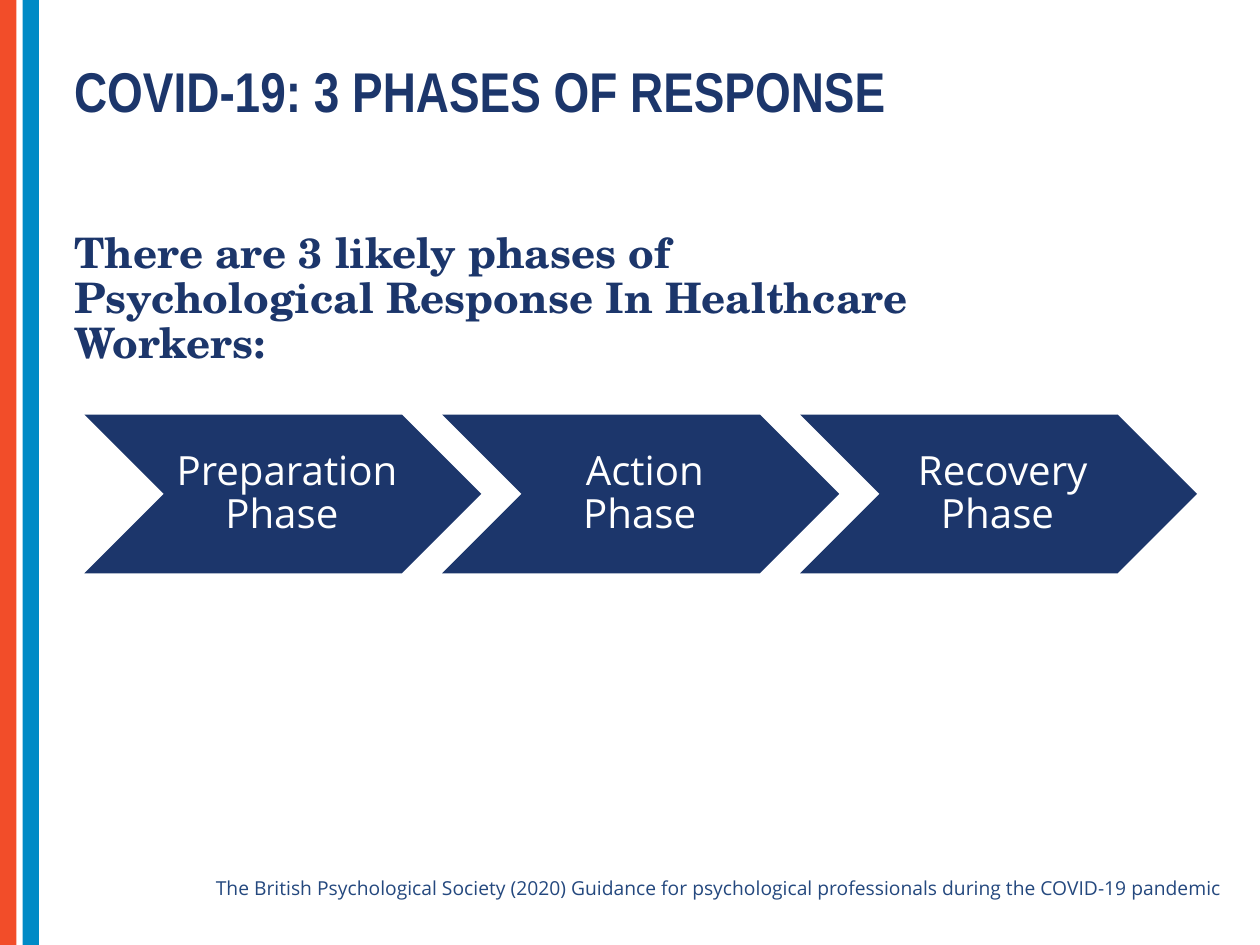
from dataclasses import dataclass

from pptx import Presentation
from pptx.dml.color import RGBColor
from pptx.enum.shapes import MSO_SHAPE as Shape
from pptx.enum.text import MSO_ANCHOR as Anchor, PP_ALIGN as Align
from pptx.util import Inches, Pt

COLORS = {
    "orange": "F24D29",
    "blue": "008AC6",
    "navy": "1C366B",
    "source": "24487E",
    "white": "FFFFFF",
}
SLIDE_WIDTH, SLIDE_HEIGHT = 10, 7.5
BAR_WIDTH, BAR_STEP = 0.13, 0.18
CHEVRON_LEFT, CHEVRON_TOP, CHEVRON_STEP = 0.67, 3.29, 2.84
CHEVRON_WIDTH, CHEVRON_HEIGHT = 3.15, 1.26


@dataclass
class Style:
    font: str
    size: float
    color: str
    bold: bool = False
    align: Align = Align.LEFT


@dataclass
class Label:
    text: str
    left: float
    top: float
    width: float
    height: float
    style: Style


CHEVRON_STYLE = Style("Open Sans", 23, "white", align=Align.CENTER)
LABELS = [
    Label("COVID-19: 3 PHASES OF RESPONSE", 0.49, 0.46, 7.4, 0.6,
          Style("Arial Narrow", 32, "navy", bold=True)),
    Label("There are 3 likely phases of Psychological Response In Healthcare Workers:",
          0.49, 1.79, 7.2, 1.2, Style("TeX Gyre Schola", 24, "navy", bold=True)),
    Label("The British Psychological Society (2020) Guidance for psychological "
          "professionals during the COVID-19 pandemic",
          0.51, 6.93, 9.29, 0.36, Style("Open Sans", 11, "source", align=Align.RIGHT)),
]
PHASES = ["Preparation", "Action", "Recovery"]


def color_of(name: str) -> RGBColor:
    return RGBColor.from_string(COLORS[name])


def set_values(target, values: dict) -> None:
    for name, value in values.items():
        setattr(target, name, value)


def write_text(frame, text: str, style: Style) -> None:
    frame.word_wrap = True
    para = frame.paragraphs[0]
    para.text = text
    set_values(para, {"alignment": style.align, "line_spacing": 0.9})
    for span in para.runs:
        set_values(span.font, {"name": style.font, "size": Pt(style.size), "bold": style.bold})
        span.font.color.rgb = color_of(style.color)


def add_label(page, label: Label) -> None:
    box = page.shapes.add_textbox(Inches(label.left), Inches(label.top),
                                  Inches(label.width), Inches(label.height))
    write_text(box.text_frame, label.text, label.style)


def add_filled(page, kind: Shape, left: float, top: float,
               width: float, height: float, color: str):
    shape = page.shapes.add_shape(kind, Inches(left), Inches(top),
                                  Inches(width), Inches(height))
    shape.shadow.inherit = False
    shape.fill.solid()
    shape.fill.fore_color.rgb = color_of(color)
    shape.line.fill.background()
    return shape


def add_phase(page, index: int, name: str) -> None:
    chevron = add_filled(page, Shape.CHEVRON, CHEVRON_LEFT + index * CHEVRON_STEP,
                         CHEVRON_TOP, CHEVRON_WIDTH, CHEVRON_HEIGHT, "navy")
    set_values(chevron.text_frame, {
        "vertical_anchor": Anchor.MIDDLE,
        "margin_left": Inches(0.1),
        "margin_top": Inches(0.03),
        "margin_right": Inches(0.03),
        "margin_bottom": Inches(0.03),
    })
    write_text(chevron.text_frame, f"{name}\vPhase ", CHEVRON_STYLE)


def main() -> None:
    deck = Presentation()
    set_values(deck, {"slide_width": Inches(SLIDE_WIDTH), "slide_height": Inches(SLIDE_HEIGHT)})
    page = deck.slides.add_slide(deck.slide_layouts[6])
    for index, color in enumerate(["orange", "blue"]):
        add_filled(page, Shape.RECTANGLE, index * BAR_STEP, 0, BAR_WIDTH, SLIDE_HEIGHT, color)
    for label in LABELS:
        add_label(page, label)
    for index, name in enumerate(PHASES):
        add_phase(page, index, name)
    deck.save("out.pptx")


if __name__ == "__main__":
    main()
